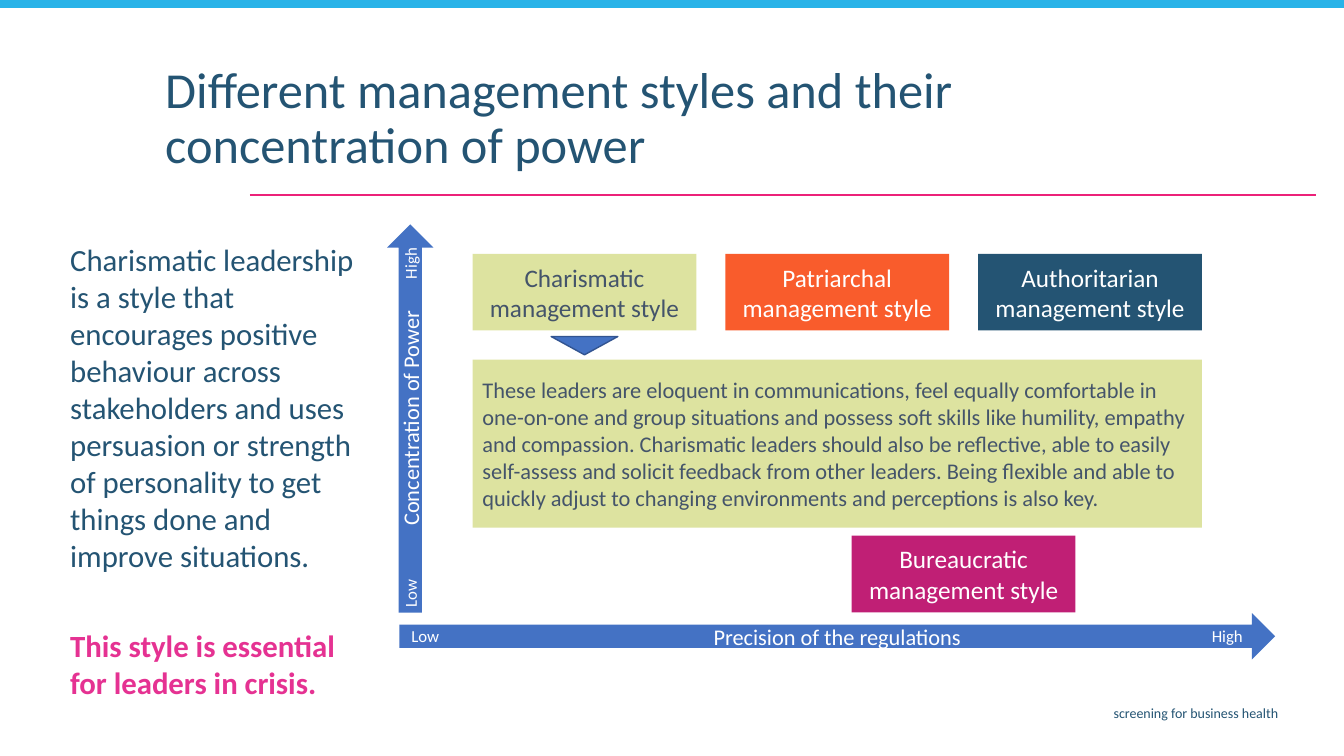
from math import cos, radians, sin

from pptx import Presentation
from pptx.dml.color import RGBColor
from pptx.enum.shapes import MSO_CONNECTOR as Connector
from pptx.enum.shapes import MSO_SHAPE as Shape
from pptx.enum.text import MSO_ANCHOR as Anchor
from pptx.enum.text import MSO_AUTO_SIZE as AutoSize
from pptx.enum.text import PP_ALIGN as Align
from pptx.oxml.ns import qn
from pptx.util import Cm, Pt
from lxml.etree import SubElement

COLORS = {
    "sky": "29B3E8", "pink": "EC2179", "accent": "E53292", "navy": "245473",
    "blue": "4472C4", "edge": "325491", "lime": "DDE3A0", "orange": "F95C2C",
    "magenta": "C01F75", "slate": "44546A", "white": "FFFFFF",
}
CARD_LEFT, CARD_TOP, CARD_STEP = 11.91, 6.4, 6.37
CARD_WIDTH, CARD_HEIGHT = 5.64, 1.93


class Page:
    font = "Calibri"

    def __init__(self, deck):
        self.slide = deck.slides.add_slide(deck.slide_layouts[5])

    def color(self, name):
        return RGBColor.from_string(COLORS[name])

    def style(self, para, size, color, align=Align.LEFT, bold=False):
        para.alignment = align
        for span in para.runs:
            span.font.name = self.font
            span.font.size = Pt(size)
            span.font.bold = bold
            span.font.color.rgb = self.color(color)

    def title(self, text, left, top, width, height):
        box = self.slide.shapes.title
        box.left, box.top, box.width, box.height = map(Cm, (left, top, width, height))
        frame = box.text_frame
        frame.text = text
        frame.auto_size = AutoSize.NONE
        frame.vertical_anchor = Anchor.TOP
        frame.margin_right = Cm(1)
        para = frame.paragraphs[0]
        para.line_spacing = 0.9
        self.style(para, 36, "navy")

    def text(self, text, left, top, width, height, size, color,
             align=Align.LEFT, anchor=Anchor.TOP, rotation=0):
        box = self.slide.shapes.add_textbox(*map(Cm, (left, top, width, height)))
        box.rotation = rotation
        frame = box.text_frame
        frame.text = text
        frame.word_wrap = True
        frame.vertical_anchor = anchor
        self.style(frame.paragraphs[0], size, color, align)
        return frame

    def shape(self, kind, left, top, width, height, fill, rotation=0, edge=None):
        box = self.slide.shapes.add_shape(kind, *map(Cm, (left, top, width, height)))
        box.rotation = rotation
        box.shadow.inherit = False
        box.fill.solid()
        box.fill.fore_color.rgb = self.color(fill)
        if edge:
            box.line.color.rgb = self.color(edge)
            box.line.width = Pt(1)
        else:
            box.line.fill.background()
        return box

    def card(self, text, left, top, width, height, fill, color, size, align):
        box = self.shape(Shape.RECTANGLE, left, top, width, height, fill)
        frame = box.text_frame
        frame.text = text
        frame.word_wrap = True
        frame.vertical_anchor = Anchor.MIDDLE
        self.style(frame.paragraphs[0], size, color, align)

    def rule(self, start, end, y, color):
        line = self.slide.shapes.add_connector(
            Connector.STRAIGHT, Cm(start), Cm(y), Cm(end), Cm(y))
        line.line.color.rgb = self.color(color)
        line.line.width = Pt(1.5)
        SubElement(line._element.spPr, qn("a:effectLst"))

    def axis(self, name, x, y, length, low, high, rotation=0):
        self.shape(Shape.RIGHT_ARROW, x - length / 2, y - 0.58, length, 1.17,
                   "blue", rotation)
        labels = [(name, 0, 7.6, 0.94, 16), ("Low", low, 1.6, 0.76, 12),
                  ("High", high, 1.6, 0.76, 12)]
        for text, offset, width, height, size in labels:
            center_x = x + offset * cos(radians(rotation))
            center_y = y + offset * sin(radians(rotation))
            self.text(text, center_x - width / 2, center_y - height / 2, width, height,
                      size, "white", Align.CENTER, Anchor.MIDDLE, rotation)


def main():
    deck = Presentation()
    deck.slide_width, deck.slide_height = Cm(33.87), Cm(19.05)
    page = Page(deck)

    page.rule(6.3, 33.17, 4.91, "pink")
    page.shape(Shape.RECTANGLE, 0, 0, 33.87, 0.2, "sky")
    page.text("screening for business health", 9.27, 17.63, 23.19, 0.74,
              10, "navy", Align.RIGHT)
    page.title("Different management styles and their concentration of power",
               3.91, 1.52, 27.66, 2.54)

    summary = page.text(
        "Charismatic leadership is a style that encourages positive behaviour across "
        "stakeholders and uses persuasion or strength of personality to get things done "
        "and improve situations.", 1.52, 5.94, 7.8, 11.94, 22, "navy")
    closing = summary.add_paragraph()
    closing.text = "This style is essential for leaders in crisis."
    closing.space_before = Pt(38)
    page.style(closing, 22, "accent", bold=True)

    page.axis("Precision of the regulations", 21.1, 16.03, 22.07, -10.38, 9.83)
    page.axis("Concentration of Power", 10.34, 10.54, 9.78, -4.41, 3.9, 270)

    cards = [
        ("Charismatic", 0, CARD_TOP, "lime", "slate"),
        ("Patriarchal", 1, CARD_TOP, "orange", "white"),
        ("Authoritarian", 2, CARD_TOP, "navy", "white"),
        ("Bureaucratic", 1.5, 13.5, "magenta", "white"),
    ]
    for name, column, top, fill, color in cards:
        page.card(f"{name} management style", CARD_LEFT + column * CARD_STEP, top,
                  CARD_WIDTH, CARD_HEIGHT, fill, color, 18, Align.CENTER)

    page.card(
        "These leaders are eloquent in communications, feel equally comfortable in "
        "one-on-one and group situations and possess soft skills like humility, empathy "
        "and compassion. Charismatic leaders should also be reflective, able to easily "
        "self-assess and solicit feedback from other leaders. Being flexible and able to "
        "quickly adjust to changing environments and perceptions is also key.",
        CARD_LEFT, 9.06, 2 * CARD_STEP + CARD_WIDTH, 4.24, "lime", "slate", 16, Align.LEFT)
    page.shape(Shape.ISOSCELES_TRIANGLE, 13.89, 8.48, 1.68, 0.46, "blue", 180, "edge")

    deck.save("out.pptx")


if __name__ == "__main__":
    main()
